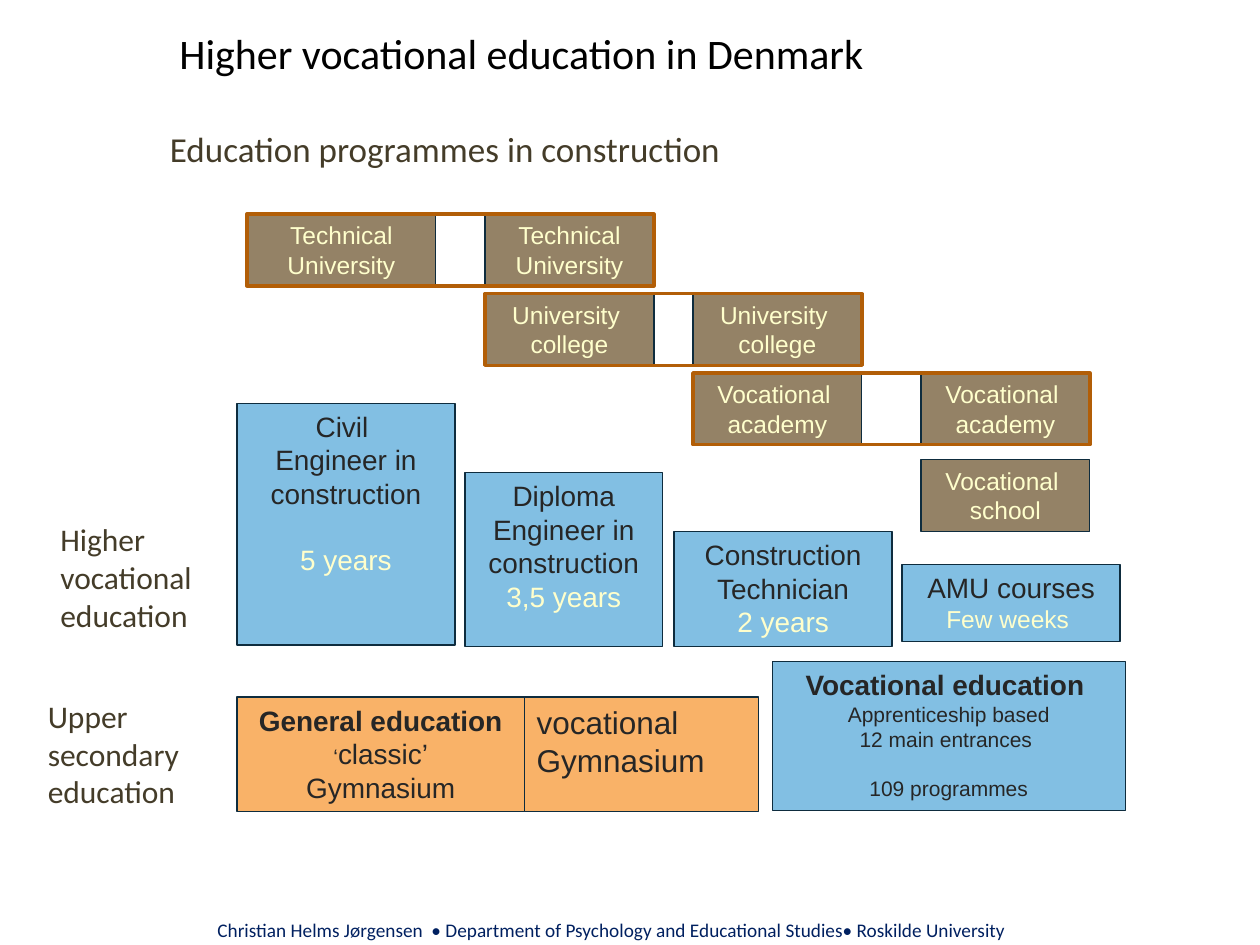
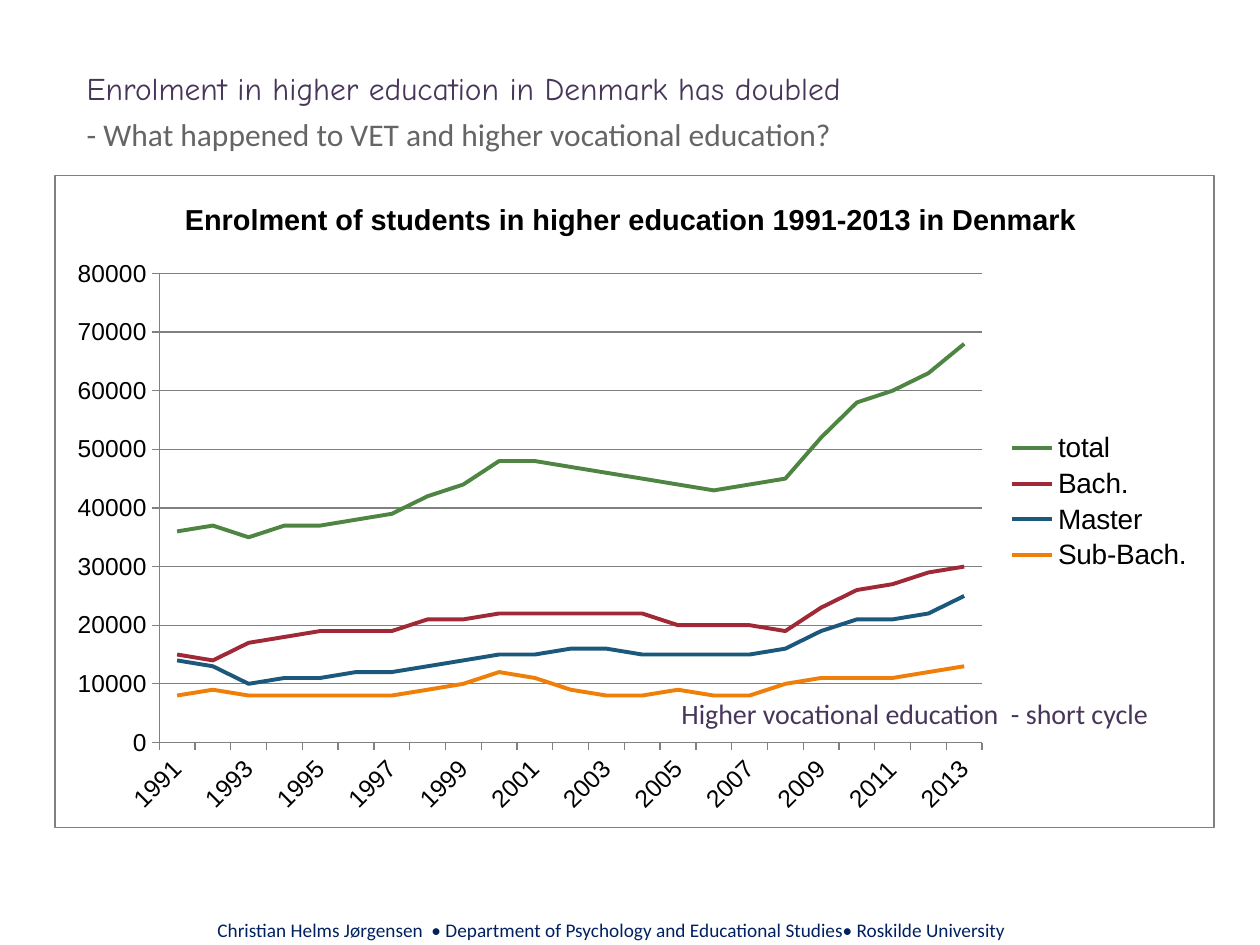
"""Build two slides on higher vocational education in Denmark."""
from collections import namedtuple

from lxml import etree
from pptx import Presentation
from pptx.chart.data import CategoryChartData
from pptx.dml.color import RGBColor
from pptx.enum.chart import XL_CHART_TYPE, XL_LEGEND_POSITION, XL_TICK_MARK
from pptx.enum.shapes import MSO_SHAPE
from pptx.enum.text import MSO_ANCHOR, PP_ALIGN
from pptx.oxml import parse_xml
from pptx.oxml.ns import nsdecls, qn
from pptx.util import Pt

RECT = MSO_SHAPE.RECTANGLE
LEFT, CENTER = PP_ALIGN.LEFT, PP_ALIGN.CENTER
TOP = MSO_ANCHOR.TOP
LINE = XL_CHART_TYPE.LINE
LEGEND_RIGHT = XL_LEGEND_POSITION.RIGHT
OUTSIDE = XL_TICK_MARK.OUTSIDE

COLORS = {
    "black": "000000", "navy": "002060", "olive": "443C29", "violet": "48365A",
    "grey": "656565", "rule": "808080", "dark": "262626", "cream": "FFFFCC",
    "orange": "F9B268", "blue": "4EA5D8", "brown": "674D26",
    "edge": "0E2C3E", "rust": "B25E07",
    "total": "4E8542", "bachelor": "9F2936", "master": "1B587C", "sub": "F07F09",
}

Style = namedtuple("Style", "size color bold font gap", defaults=(False, "Arial", 0))
STYLES = {
    "footer": Style(11, "navy", font="Calibri"),
    "title": Style(24, "black", font="Calibri"),
    "subtitle": Style(20, "olive", font="Calibri", gap=26),
    "level": Style(18, "olive", font="Calibri"),
    "headline": Style(18, "violet", font="Comic Neue"),
    "question": Style(18, "grey", font="Calibri"),
    "note": Style(16, "violet", font="Calibri"),
    "name": Style(16, "dark"),
    "strong": Style(16, "dark", bold=True),
    "large": Style(18, "dark"),
    "small": Style(12, "dark"),
    "small_apart": Style(12, "dark", gap=13.8),
    "years": Style(16, "cream"),
    "years_apart": Style(16, "cream", gap=18.4),
    "weeks": Style(14, "cream"),
    "place": Style(14, "cream"),
}

FOOTER = ("Christian Helms Jørgensen  • Department of Psychology and Educational Studies"
          "• Roskilde University")
HEADING = [[(" Higher vocational education in Denmark", "title")],
           [("Education programmes in construction", "subtitle")]]
QUESTION = [[("Enrolment in higher education in Denmark has doubled", "headline")],
            [("- What happened to VET and higher vocational education?", "question")]]
NOTE = [[("Higher vocational education  - short cycle", "note")]]

LEVELS = [
    (20.2, 394.6, ["Upper", "secondary", "education"]),
    (27.4, 293.8, ["Higher", "vocational", "education"]),
]
PROGRAMMES = [
    ((135.4, 398.2, 164.2, 65.5), "orange", CENTER,
     [[("General education", "strong")], [("‘", "small"), ("classic’", "name")],
      [("Gymnasium", "name")]]),
    ((299.6, 398.2, 133.9, 65.5), "orange", LEFT,
     [[("vocational", "large")], [("Gymnasium", "large")]]),
    ((441.4, 378, 201.6, 85), "blue", CENTER,
     [[("Vocational education ", "strong")], [("Apprenticeship based", "small")],
      [("12 main entrances ", "small")], [("109 programmes", "small_apart")]]),
    ((135.4, 230.4, 124.6, 138.2), "blue", CENTER,
     [[("Civil ", "name")], [("Engineer in", "name")], [("construction", "name")],
      [("5 years", "years_apart")]]),
    ((265.7, 270, 113, 99.4), "blue", CENTER,
     [[("Diploma", "name")], [("Engineer in", "name")], [("construction", "name")],
      [("3,5 years", "years")]]),
    ((385.2, 303.8, 124.6, 65.5), "blue", CENTER,
     [[("Construction", "name")], [("Technician", "name")], [("2 years", "years")]]),
    ((515.5, 322.6, 124.6, 43.9), "blue", CENTER,
     [[("AMU courses", "name")], [("Few weeks ", "weeks")]]),
]
PLACES = [["Technical University"], ["University ", "college"], ["Vocational ", "academy"]]
SCHOOL = ["Vocational ", "school"]
PLACE_LEFTS = [141.1, 277.2, 396, 526.3]
PLACE_WIDTHS = [108, 96.5, 96.5, 96.5]
PLACE_TOP, PLACE_STEP, PLACE_H, SCHOOL_TOP = 122.4, 45.4, 41, 262.8

CHART_TITLE = "Enrolment of students in higher education 1991-2013 in Denmark "
YEARS = [str(year) for year in range(1991, 2014)]
THOUSANDS = [
    ("total ", "total", [36, 37, 35, 37, 37, 38, 39, 42, 44, 48, 48, 47, 46, 45, 44, 43,
                         44, 45, 52, 58, 60, 63, 68]),
    ("Bach.", "bachelor", [15, 14, 17, 18, 19, 19, 19, 21, 21, 22, 22, 22, 22, 22, 20, 20,
                           20, 19, 23, 26, 27, 29, 30]),
    ("Master ", "master", [14, 13, 10, 11, 11, 12, 12, 13, 14, 15, 15, 16, 16, 15, 15, 15,
                           15, 16, 19, 21, 21, 22, 25]),
    ("Sub-Bach. ", "sub", [8, 9, 8, 8, 8, 8, 8, 9, 10, 12, 11, 9, 8, 8, 9, 8,
                           8, 10, 11, 11, 11, 12, 13]),
]


def rgb(name):
    return RGBColor.from_string(COLORS[name])


def set_font(font, size, color, bold=False, name="Arial"):
    font.size, font.bold, font.name = Pt(size), bold, name
    font.color.rgb = rgb(color)


def write(tf, lines, align=LEFT, spacing=None):
    tf.vertical_anchor = TOP
    for i, line in enumerate(lines):
        p = tf.add_paragraph() if i else tf.paragraphs[0]
        p.alignment = align
        if spacing:
            p.line_spacing = Pt(spacing)
        for text, key in line:
            style = STYLES[key]
            r = p.add_run()
            r.text = text
            set_font(r.font, style.size, style.color, style.bold, style.font)
            if style.gap:
                p.space_before = Pt(style.gap)


def add_text(s, box, lines, align=LEFT, spacing=None, wrap=True):
    tf = s.shapes.add_textbox(*map(Pt, box)).text_frame
    tf.word_wrap = wrap
    write(tf, lines, align, spacing)


def add_box(s, box, fill=None, line="edge", width=0.75):
    sp = s.shapes.add_shape(RECT, *map(Pt, box))
    sp.shadow.inherit = False
    if fill:
        sp.fill.solid()
        sp.fill.fore_color.rgb = rgb(fill)
        if fill != "orange":
            clr = sp._element.spPr.find(".//" + qn("a:srgbClr"))
            etree.SubElement(clr, qn("a:alpha")).set("val", "70000")
    else:
        sp.fill.background()
    sp.line.color.rgb = rgb(line)
    sp.line.width = Pt(width)
    return sp


def add_place(s, column, top, words):
    sp = add_box(s, (PLACE_LEFTS[column], top, PLACE_WIDTHS[column], PLACE_H), "brown")
    write(sp.text_frame, [[(word, "place")] for word in words], CENTER)


def add_slide(prs):
    s = prs.slides.add_slide(prs.slide_layouts[6])
    add_text(s, (16.6, 521.3, 666, 18.7), [[(FOOTER, "footer")]], CENTER)
    return s


def manual_layout(x, y, w, h, inner=False):
    target = '<c:layoutTarget val="inner"/>' if inner else ""
    sizes = "".join(f'<c:{k} val="{v}"/>' for k, v in zip("xywh", (x, y, w, h)))
    return parse_xml(f'<c:layout {nsdecls("c")}><c:manualLayout>{target}'
                     '<c:xMode val="edge"/><c:yMode val="edge"/>'
                     f'{sizes}</c:manualLayout></c:layout>')


def add_enrolment_chart(s):
    data = CategoryChartData()
    data.categories = YEARS
    for name, _, values in THOUSANDS:
        data.add_series(name, [value * 1000 for value in values])
    chart = s.shapes.add_chart(LINE, *map(Pt, (31, 100.1, 663.1, 373)), data).chart
    set_font(chart.font, 14, "black")

    p = chart.chart_title.text_frame.paragraphs[0]
    p.text = CHART_TITLE
    set_font(p.runs[0].font, 16.5, "black", True)
    chart.chart_title.include_in_layout = False

    chart.has_legend = True
    legend = chart.legend
    legend.position = LEGEND_RIGHT
    legend.include_in_layout = False
    set_font(legend.font, 16, "black")
    legend._element.find(qn("c:legendPos")).addnext(manual_layout(0.82, 0.21, 0.17, 0.54))

    for axis in (chart.category_axis, chart.value_axis):
        axis.major_tick_mark = OUTSIDE
        axis.format.line.color.rgb = rgb("rule")
        set_font(axis.tick_labels.font, 14, "black")
    values = chart.value_axis
    values.minimum_scale, values.maximum_scale, values.major_unit = 0, 80000, 10000
    values.has_major_gridlines = True
    values.major_gridlines.format.line.color.rgb = rgb("rule")
    years = chart.category_axis._element
    years.find(qn("c:txPr")).find(qn("a:bodyPr")).set("rot", "-2700000")
    years.find(qn("c:noMultiLvlLbl")).addprevious(
        parse_xml(f'<c:tickLblSkip {nsdecls("c")} val="2"/>'))

    for series, (_, color, _) in zip(chart.plots[0].series, THOUSANDS):
        series.smooth = False
        series.format.line.color.rgb = rgb(color)
        series.format.line.width = Pt(2.25)
    chart.plots[0].vary_by_categories = False

    root = chart._chartSpace.find(qn("c:chart"))
    plot = root.find(qn("c:plotArea"))
    for old in plot.findall(qn("c:layout")):
        plot.remove(old)
    plot.insert(0, manual_layout(0.09, 0.15, 0.71, 0.72, inner=True))
    root.addnext(parse_xml(
        f'<c:spPr {nsdecls("c", "a")}><a:noFill/><a:ln w="9525"><a:solidFill>'
        f'<a:srgbClr val="{COLORS["rule"]}"/></a:solidFill></a:ln></c:spPr>'))


def build_programmes(prs):
    s = add_slide(prs)
    add_text(s, (90, 15.1, 635, 85.7), HEADING, spacing=26)
    for box, fill, align, lines in PROGRAMMES:
        write(add_box(s, box, fill).text_frame, lines, align)
    tops = [PLACE_TOP + i * PLACE_STEP for i in range(len(PLACES))]
    for i, (top, words) in enumerate(zip(tops, PLACES)):
        add_place(s, i, top, words)
        add_place(s, i + 1, top, words)
    add_place(s, 3, SCHOOL_TOP, SCHOOL)
    for i, top in enumerate(tops):
        right = PLACE_LEFTS[i + 1] + PLACE_WIDTHS[i + 1]
        add_box(s, (PLACE_LEFTS[i], top, right - PLACE_LEFTS[i], PLACE_H),
                line="rust", width=2)
    for left, top, words in LEVELS:
        add_text(s, (left, top, 94.7, 72.7), [[(word, "level")] for word in words],
                 wrap=False)


def build_enrolment(prs):
    s = add_slide(prs)
    add_text(s, (42.5, 31.7, 652.3, 59.8), QUESTION, spacing=26)
    add_enrolment_chart(s)
    add_text(s, (382.3, 394.6, 284.4, 26.6), NOTE, wrap=False)


def main():
    prs = Presentation()
    prs.slide_width, prs.slide_height = Pt(720), Pt(540)
    build_programmes(prs)
    build_enrolment(prs)
    prs.save("out.pptx")


if __name__ == "__main__":
    main()
